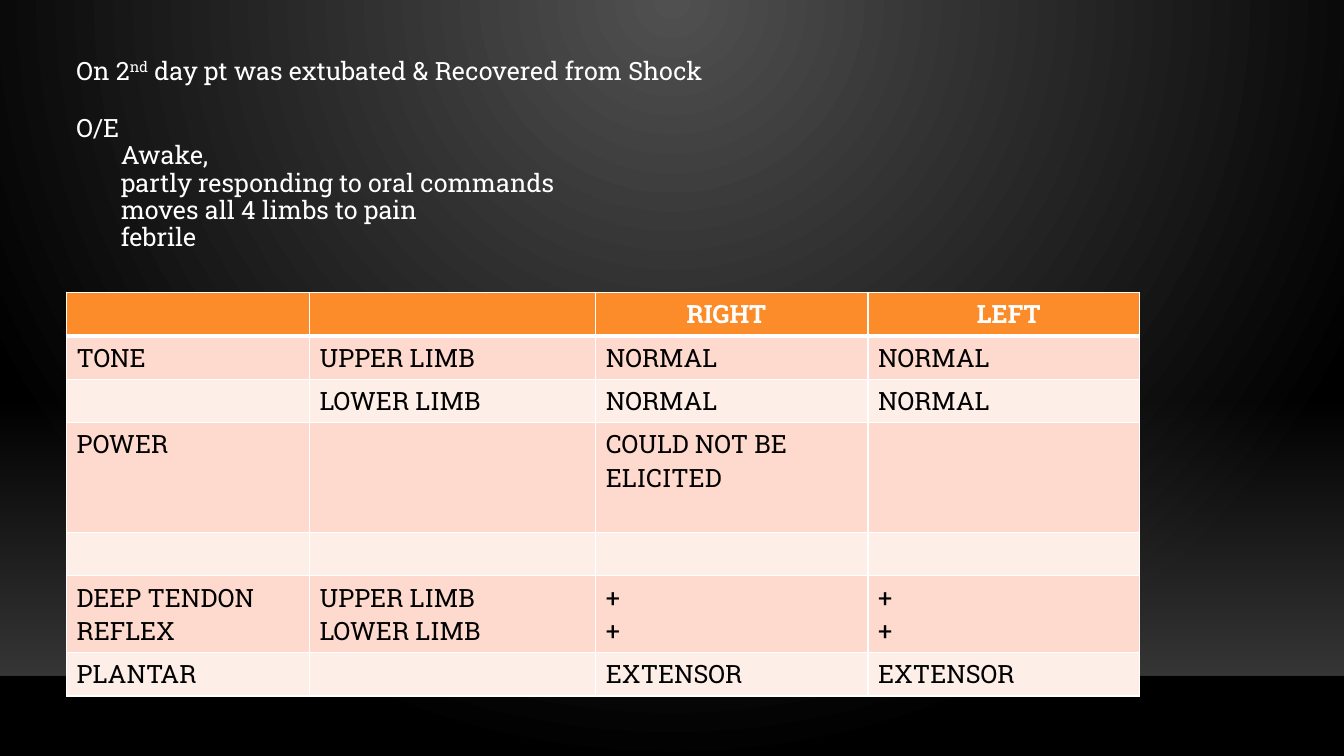
from pptx import Presentation
from pptx.dml.color import RGBColor
from pptx.enum.shapes import MSO_CONNECTOR, MSO_SHAPE
from pptx.oxml import parse_xml
from pptx.oxml.ns import nsdecls, qn
from pptx.util import Inches, Pt
from lxml import etree

FONT = "Roboto Slab"
WHITE, BLACK = "FFFFFF", "000000"
HEADER, BANDS = "FB8C29", ("FEEEE8", "FDDACD")
FLOOR = 6.71

NOTES = [
    (0, 0, [("On 2", 0), ("nd", 30), (" day pt was extubated & Recovered from Shock", 0)]),
    (0, 21.6, [("O/E", 0)]),
    (0.44, 0, [("Awake,", 0)]),
    (0.44, 0, [("partly responding to oral commands", 0)]),
    (0.44, 0, [("moves all 4 limbs to pain", 0)]),
    (0.44, 0, [("febrile", 0)]),
]

EXAM = [
    ("", "", "RIGHT", "LEFT"),
    ("TONE", "UPPER LIMB", "NORMAL", "NORMAL"),
    ("", "LOWER LIMB", "NORMAL", "NORMAL"),
    ("POWER", "", "COULD NOT BE ELICITED", ""),
    ("", "", "", ""),
    ("DEEP TENDON REFLEX", "UPPER LIMB\nLOWER LIMB", "+\n+", "+\n+"),
    ("PLANTAR", "", "EXTENSOR", "EXTENSOR"),
]
HEADER_INDENTS = (0, 0, 0.8, 0.98)
COLUMN_WIDTHS = (2.41, 2.84, 2.7, 2.69)
ROW_HEIGHTS = (0.43, 0.43, 0.43, 1.09, 0.43, 0.76, 0.43)


def color(code):
    return RGBColor.from_string(code)


def set_gradient(fill, parent, stops, shade):
    fill.gradient()
    stop_xml = "".join(
        f'<a:gs pos="{place * 1000}"><a:srgbClr val="{code}">'
        f'<a:alpha val="{opacity * 1000}"/></a:srgbClr></a:gs>'
        for place, code, opacity in stops)
    gradient = parse_xml(
        f'<a:gradFill {nsdecls("a")} rotWithShape="1"><a:gsLst>{stop_xml}</a:gsLst>{shade}</a:gradFill>')
    parent.replace(parent.find(qn("a:gradFill")), gradient)


def write_span(para, text, code=WHITE, bold=False, baseline=0):
    span = para.add_run()
    span.text = text
    span.font.name = FONT
    span.font.size = Pt(18)
    span.font.bold = bold
    span.font.color.rgb = color(code)
    if baseline:
        span.font._element.set("baseline", str(baseline * 1000))


def set_borders(cell, widths):
    properties = cell._tc.get_or_add_tcPr()
    for place, (side, width) in enumerate(widths.items()):
        properties.insert(place, parse_xml(
            f'<a:ln{side} {nsdecls("a")} w="{Pt(width)}"><a:solidFill>'
            f'<a:srgbClr val="{WHITE}"/></a:solidFill></a:ln{side}>'))


def draw_backdrop(page):
    fill = page.background.fill
    fill.solid()
    set_gradient(fill, page._element.find(".//" + qn("p:bgPr")),
                 [(0, "505050", 100), (100, BLACK, 100)],
                 '<a:path path="circle"><a:fillToRect l="43000" t="0" r="43000" b="100000"/></a:path>')
    glow = page.shapes.add_shape(MSO_SHAPE.RECTANGLE, 0, Inches(3.96), Inches(13.33), Inches(2.74))
    glow.shadow.inherit = False
    glow.line.fill.background()
    set_gradient(glow.fill, glow._element.spPr,
                 [(0, "454545", 0), (100, "454545", 80)], '<a:lin ang="5400000" scaled="0"/>')
    edge = page.shapes.add_connector(
        MSO_CONNECTOR.STRAIGHT, 0, Inches(FLOOR), Inches(13.33), Inches(FLOOR))
    edge.line.width = Pt(1)
    edge.line.color.rgb = color("000001")
    tint = edge._element.spPr.find(".//" + qn("a:srgbClr"))
    etree.SubElement(tint, qn("a:alpha")).set("val", "20000")
    etree.SubElement(edge._element.spPr, qn("a:effectLst"))


def draw_notes(page):
    box = page.shapes.add_textbox(Inches(0.66), Inches(0.53), Inches(7.75), Inches(2.22))
    frame = box.text_frame
    frame.word_wrap = True
    for number, (indent, gap, spans) in enumerate(NOTES):
        para = frame.add_paragraph() if number else frame.paragraphs[0]
        para.line_spacing = 0.9
        para.space_before = Pt(gap)
        para._p.get_or_add_pPr().set("marL", str(Inches(indent)))
        for text, baseline in spans:
            write_span(para, text, baseline=baseline)


def draw_exam(page):
    table = page.shapes.add_table(
        len(EXAM), len(COLUMN_WIDTHS), Inches(0.66), Inches(2.9),
        Inches(sum(COLUMN_WIDTHS)), Inches(sum(ROW_HEIGHTS))).table
    for column, width in zip(table.columns, COLUMN_WIDTHS):
        column.width = Inches(width)
    for row, height in zip(table.rows, ROW_HEIGHTS):
        row.height = Inches(height)
    for r, texts in enumerate(EXAM):
        header = r == 0
        for c, text in enumerate(texts):
            cell = table.cell(r, c)
            cell.fill.solid()
            cell.fill.fore_color.rgb = color(HEADER if header else BANDS[r % 2])
            set_borders(cell, {"L": 1, "R": 1, "T": 3 if r == 1 else 1, "B": 3 if header else 1})
            frame = cell.text_frame
            for number, line in enumerate(text.split("\n")):
                para = frame.add_paragraph() if number else frame.paragraphs[0]
                if header:
                    para._p.get_or_add_pPr().set("marL", str(Inches(HEADER_INDENTS[c])))
                if line:
                    write_span(para, line, code=WHITE if header else BLACK, bold=header)
                else:
                    para.font.size = Pt(18)
                    para.font.name = FONT


def main():
    deck = Presentation()
    deck.slide_width, deck.slide_height = Inches(13.33), Inches(7.5)
    page = deck.slides.add_slide(deck.slide_layouts[6])
    draw_backdrop(page)
    draw_exam(page)
    draw_notes(page)
    deck.save("out.pptx")


if __name__ == "__main__":
    main()
